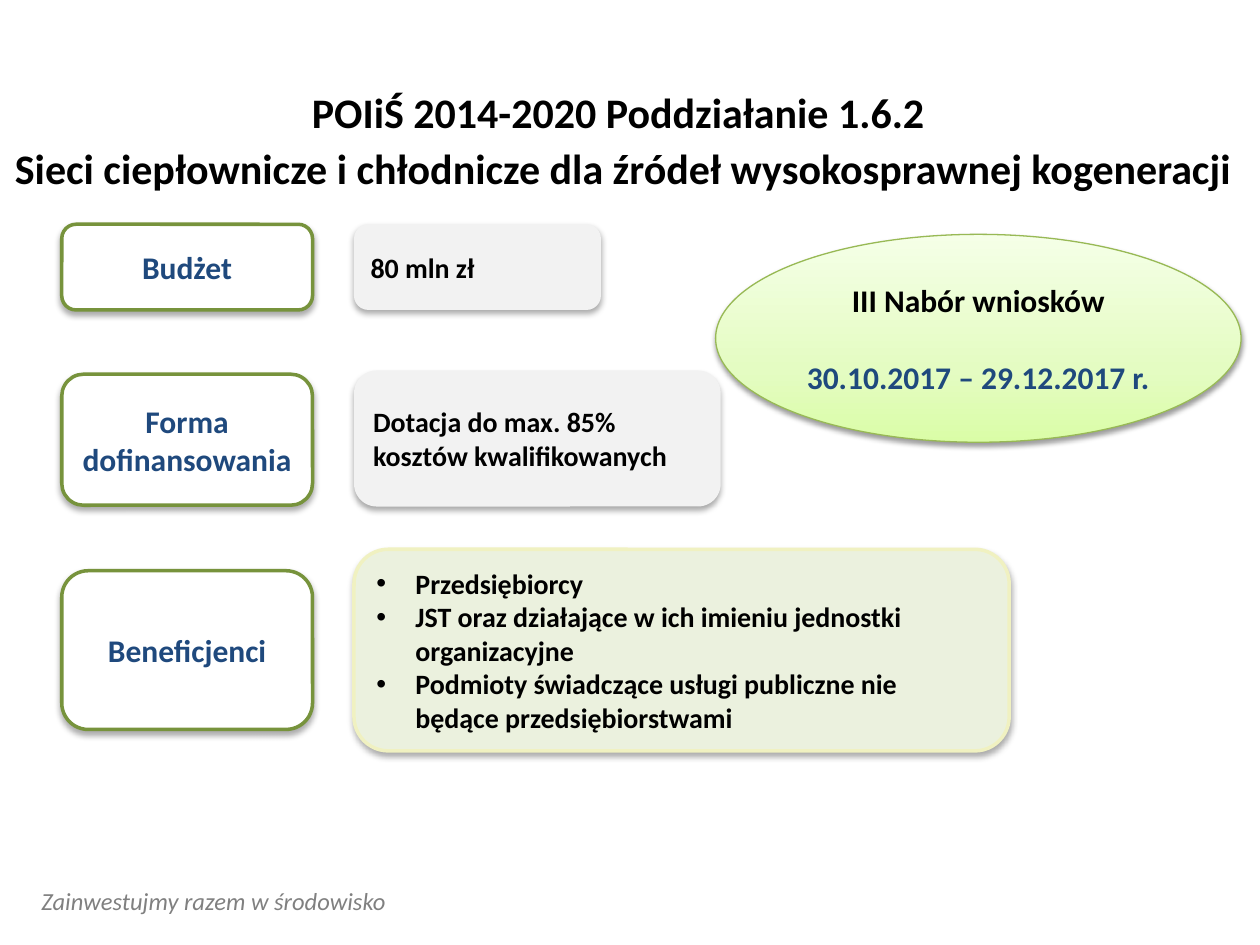
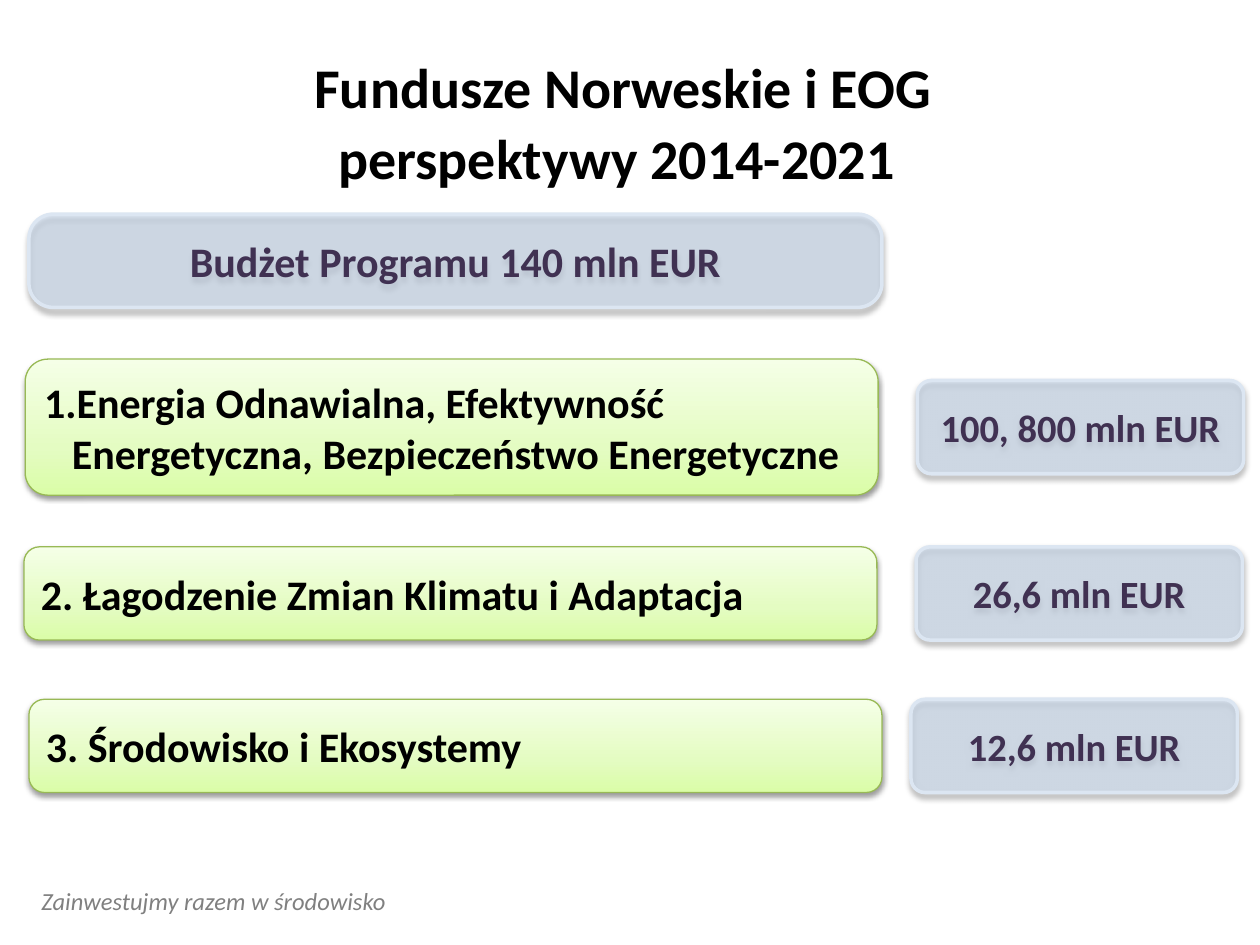
from dataclasses import dataclass, field
from typing import Any

import lxml.etree
import pptx
import pptx.dml.color
import pptx.enum.shapes
import pptx.enum.text
import pptx.oxml.ns
import pptx.util

Inches = pptx.util.Inches
Pt = pptx.util.Pt
RGB = pptx.dml.color.RGBColor.from_string
qn = pptx.oxml.ns.qn
SHAPE = pptx.enum.shapes.MSO_SHAPE
ALIGN = pptx.enum.text.PP_ALIGN
ANCHOR = pptx.enum.text.MSO_ANCHOR
FIT = pptx.enum.text.MSO_AUTO_SIZE

LIME_STOPS = [(0, "DAFDA7"), (35, "E4FCC2"), (100, "F5FFE7")]
SOFT_SHADOW = {"alpha": 32, "blur": 3.5, "dist": 2.2}
LIME_SHADOW = {"alpha": 38, "blur": 3.1, "dist": 1.6}


@dataclass
class Theme:
    font: str = "Calibri"
    black: str = "000000"
    navy: str = "1F497D"
    purple: str = "403152"
    grey: str = "808080"
    footer_size: int = 14
    body_size: int = 16
    label_size: int = 18
    amount_size: int = 22
    heading_size: int = 24
    title_size: int = 32
    boxes: dict = field(default_factory=lambda: {
        "label": {"fill": "FFFFFF", "line": ("77933C", 2), "shadow": SOFT_SHADOW},
        "plain": {"fill": "F2F2F2", "shadow": SOFT_SHADOW},
        "olive": {"fill": "EBF1DE", "line": ("F0F1C1", 2), "shadow": SOFT_SHADOW},
        "blue": {"fill": "C6D9F1", "alpha": 51, "line": ("DCE6F2", 2), "shadow": SOFT_SHADOW},
        "lime": {"stops": LIME_STOPS, "line": ("98B955", 0.75), "shadow": LIME_SHADOW},
    })


def set_all(obj, values):
    for name, value in values.items():
        setattr(obj, name, value)


def sub(parent, tag, **attrs):
    return lxml.etree.SubElement(parent, qn(tag), {k: str(v) for k, v in attrs.items()})


@dataclass
class Deck:
    prs: Any
    theme: Theme
    slide: Any = None

    def new_slide(self):
        self.slide = self.prs.slides.add_slide(self.prs.slide_layouts[6])
        self.text_box((0.23, 6.98, 4.22, 0.34), ["Zainwestujmy razem w środowisko"],
                      self.theme.footer_size, self.theme.grey, bold=False, italic=True)

    def fill_text(self, tf, lines, size, color, align=ALIGN.LEFT, bullet=False,
                  bold=True, italic=False, **spacing):
        tf.word_wrap = True
        for i, line in enumerate(lines):
            text, own = line if isinstance(line, tuple) else (line, {})
            p = tf.paragraphs[0] if i == 0 else tf.add_paragraph()
            p.text = text
            set_all(p, {"alignment": align, **spacing})
            if "before" in own:
                p.space_before = Pt(own["before"])
            if bullet or "indent" in own:
                pPr = p._p.get_or_add_pPr()
                pPr.set("marL", str(Inches(own.get("indent", 0.31))))
            if bullet:
                pPr.set("indent", str(-Inches(0.31)))
                sub(pPr, "a:buFont", typeface="Arial")
                sub(pPr, "a:buChar", char="•")
            for r in p.runs:
                set_all(r.font, {"name": self.theme.font, "size": Pt(size),
                                 "bold": bold, "italic": italic})
                r.font.color.rgb = RGB(own.get("color", color))

    def text_box(self, at, lines, size, color, **fmt):
        tf = self.slide.shapes.add_textbox(*map(Inches, at)).text_frame
        self.fill_text(tf, lines, size, color, **fmt)
        tf.auto_size = FIT.SHAPE_TO_FIT_TEXT

    def title(self, at, lines, size):
        self.text_box(at, lines, size, self.theme.black, align=ALIGN.CENTER,
                      line_spacing=0.9, space_after=Pt(6))

    def paint(self, sp, stops=None, fill=None, alpha=None, line=None, shadow=None):
        if stops:
            sp.fill.gradient()
            sp.fill.gradient_angle = 90
            gs_list = sp._element.spPr.find(".//" + qn("a:gsLst"))
            for gs in list(gs_list):
                gs_list.remove(gs)
            for pos, color in stops:
                sub(sub(gs_list, "a:gs", pos=pos * 1000), "a:srgbClr", val=color)
        else:
            sp.fill.solid()
            sp.fill.fore_color.rgb = RGB(fill)
        if alpha:
            color = sp._element.spPr.find(qn("a:solidFill"))[0]
            sub(color, "a:alpha", val=alpha * 1000)
        if line:
            sp.line.color.rgb = RGB(line[0])
            sp.line.width = Pt(line[1])
        else:
            sp.line.fill.background()
        sp.shadow.inherit = False
        effects = sp._element.spPr.find(qn("a:effectLst"))
        outer = sub(effects, "a:outerShdw", blurRad=Pt(shadow["blur"]),
                    dist=Pt(shadow["dist"]), dir=90 * 60000, rotWithShape=0)
        sub(sub(outer, "a:srgbClr", val=self.theme.black), "a:alpha",
            val=shadow["alpha"] * 1000)

    def box(self, style, at, lines, size, color, kind=SHAPE.ROUNDED_RECTANGLE,
            corner=None, **fmt):
        sp = self.slide.shapes.add_shape(kind, *map(Inches, at))
        if corner:
            sp.adjustments[0] = corner
        self.paint(sp, **self.theme.boxes[style])
        sp.text_frame.vertical_anchor = ANCHOR.MIDDLE
        self.fill_text(sp.text_frame, lines, size, color, **fmt)


def add_call_slide(deck):
    th = deck.theme
    deck.new_slide()
    labels = [("Budżet", 1.78, 0.68), ("Forma dofinansowania", 2.97, 1.04),
              ("Beneficjenci", 4.53, 1.26)]
    for text, top, height in labels:
        deck.box("label", (0.49, top, 1.99, height), [text], th.label_size, th.navy,
                 align=ALIGN.CENTER)
    deck.box("olive", (2.81, 4.36, 5.2, 1.6),
             ["Przedsiębiorcy",
              "JST oraz działające w ich imieniu jednostki organizacyjne",
              "Podmioty świadczące usługi publiczne nie będące przedsiębiorstwami"],
             th.body_size, th.black, corner=0.17, bullet=True)
    deck.box("lime", (5.68, 1.86, 4.17, 1.65),
             ["III Nabór wniosków",
              ("30.10.2017 – 29.12.2017 r.", {"color": th.navy, "before": 22})],
             th.label_size, th.black, kind=SHAPE.OVAL, align=ALIGN.CENTER)
    values = [("80 mln zł", 1.78, 1.96, 0.68),
              ("Dotacja do max. 85%\vkosztów kwalifikowanych", 2.94, 2.91, 1.08)]
    for text, top, width, height in values:
        deck.box("plain", (2.81, top, width, height), [text], th.body_size, th.black)
    deck.title((0, 0.68, 9.89, 0.91),
               ["POIiŚ 2014-2020 Poddziałanie 1.6.2 ",
                "Sieci ciepłownicze i chłodnicze dla źródeł wysokosprawnej kogeneracji "],
               th.heading_size)


def add_funds_slide(deck):
    th = deck.theme
    deck.new_slide()
    deck.title((0, 0.43, 9.89, 1.15),
               ["Fundusze Norweskie i EOG", "perspektywy 2014-2021 "], th.title_size)
    deck.box("blue", (0.23, 1.7, 6.77, 0.74), ["Budżet Programu 140 mln EUR"],
             th.heading_size, th.purple, corner=0.26, align=ALIGN.CENTER)
    areas = [
        (["1.Energia Odnawialna, Efektywność",
          ("Energetyczna, Bezpieczeństwo Energetyczne", {"indent": 0.22})],
         (0.2, 2.85, 1.08), "100, 800 mln EUR", (7.28, 3.02)),
        (["2. Łagodzenie Zmian Klimatu i Adaptacja"],
         (0.19, 4.34, 0.74), "26,6 mln EUR", (7.27, 4.34)),
        (["3. Środowisko i Ekosystemy"],
         (0.23, 5.55, 0.74), "12,6 mln EUR", (7.23, 5.55)),
    ]
    for lines, (left, top, height), amount, amount_at in areas:
        deck.box("lime", (left, top, 6.77, height), lines, th.heading_size, th.black)
        deck.box("blue", (*amount_at, 2.59, 0.74), [amount], th.amount_size, th.purple,
                 corner=0.15, align=ALIGN.CENTER)


def main():
    prs = pptx.Presentation()
    set_all(prs, {"slide_width": Inches(10), "slide_height": Inches(7.5)})
    deck = Deck(prs, Theme())
    add_call_slide(deck)
    add_funds_slide(deck)
    prs.save("out.pptx")


if __name__ == "__main__":
    main()
